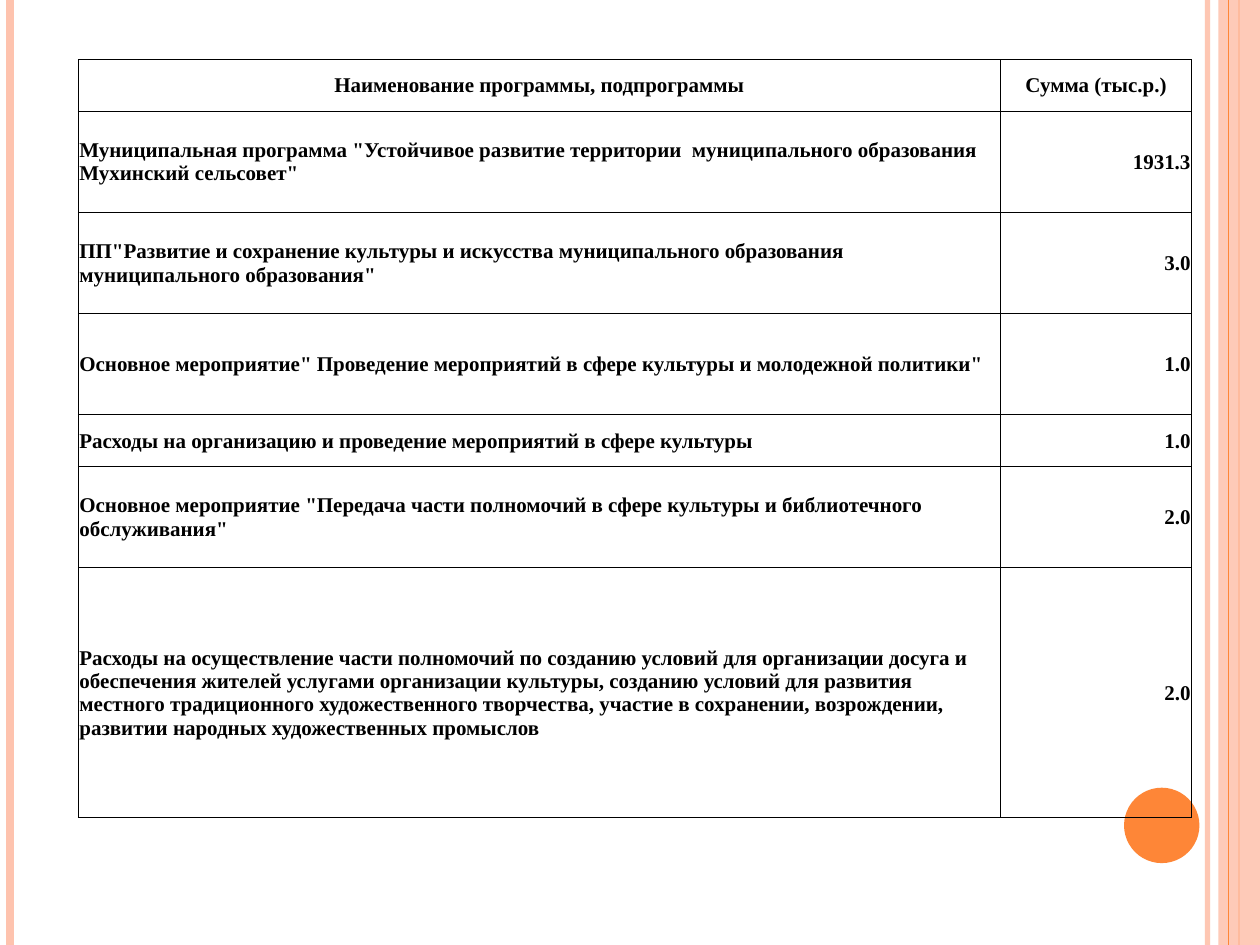
from lxml.etree import SubElement
from pptx import Presentation
from pptx.dml.color import RGBColor
from pptx.enum.shapes import MSO_CONNECTOR as Link, MSO_SHAPE as Shape
from pptx.enum.text import MSO_ANCHOR as Anchor, PP_ALIGN as Align
from pptx.oxml.ns import qn
from pptx.util import Cm, Pt

COLORS = {"pink": "FEC3AE", "orange": "FE8637", "black": "000000"}
WIDTH, HEIGHT = 25.4, 19.05
BAND_LEFT = 24.56

ROWS = [
    ("Наименование программы, подпрограммы", "Сумма (тыс.р.)"),
    ('Муниципальная программа "Устойчивое развитие территории  '
     'муниципального образования Мухинский сельсовет"', "1931.3"),
    ('ПП"Развитие и сохранение культуры и искусства муниципального образования '
     'муниципального образования"', "3.0"),
    ('Основное мероприятие" Проведение мероприятий в сфере культуры '
     'и молодежной политики"', "1.0"),
    ("Расходы на организацию и проведение мероприятий в сфере культуры", "1.0"),
    ('Основное мероприятие "Передача части полномочий в сфере культуры '
     'и библиотечного обслуживания"', "2.0"),
    ("Расходы на осуществление части полномочий по созданию условий для "
     "организации досуга и обеспечения жителей услугами организации культуры, "
     "созданию условий для развития местного традиционного художественного "
     "творчества, участие в сохранении, возрождении, развитии народных "
     "художественных промыслов", "2.0"),
]
COLUMN_WIDTHS = [18.59, 3.85]
LOW, MIDDLE, TALL = 1.04, 2.04, 5.04
ROW_HEIGHTS = [LOW, MIDDLE, MIDDLE, MIDDLE, LOW, MIDDLE, TALL]


def rgb(name):
    return RGBColor.from_string(COLORS[name])


def set_opacity(properties, percent):
    """Add opacity to the first solid colour inside the shape properties."""
    color = next(properties.iter(qn("a:srgbClr")))
    SubElement(color, qn("a:alpha"), val=str(percent * 1000))


class SlidePainter:
    """Holds the text style and the slide that is being filled."""

    def __init__(self, slide):
        self.slide = slide
        self.font = {"name": "Times New Roman", "size": Pt(12), "bold": True}
        self.cell_format = {
            "vertical_anchor": Anchor.MIDDLE,
            "margin_left": Cm(0.02), "margin_right": Cm(0.02),
            "margin_top": Cm(0.02), "margin_bottom": Cm(0),
        }
        self.border_width = Pt(0.5)

    def stripe(self, x, color, weight, opacity=100):
        """Draw a vertical line over the full slide height."""
        line = self.slide.shapes.add_connector(
            Link.STRAIGHT, Cm(x), Cm(0), Cm(x), Cm(HEIGHT))
        line.line.color.rgb = rgb(color)
        line.line.width = Pt(weight)
        properties = line._element.spPr
        SubElement(properties, qn("a:effectLst"))
        if opacity < 100:
            set_opacity(properties, opacity)

    def shape(self, kind, left, top, width, height, color, opacity=100):
        shape = self.slide.shapes.add_shape(
            kind, Cm(left), Cm(top), Cm(width), Cm(height))
        shape.shadow.inherit = False
        shape.fill.solid()
        shape.fill.fore_color.rgb = rgb(color)
        shape.line.fill.background()
        if opacity < 100:
            set_opacity(shape._element.spPr, opacity)

    def border(self, cell):
        properties = cell._tc.get_or_add_tcPr()
        for position, side in enumerate(("a:lnL", "a:lnR", "a:lnT", "a:lnB")):
            line = properties.makeelement(qn(side), {"w": str(self.border_width)})
            fill = SubElement(line, qn("a:solidFill"))
            SubElement(fill, qn("a:srgbClr"), val=COLORS["black"])
            properties.insert(position, line)

    def cell(self, cell, text, align):
        for key, value in self.cell_format.items():
            setattr(cell, key, value)
        cell.fill.background()
        self.border(cell)
        para = cell.text_frame.paragraphs[0]
        para.alignment = align
        span = para.add_run()
        span.text = text
        for key, value in self.font.items():
            setattr(span.font, key, value)
        span.font.color.rgb = rgb("black")

    def table(self, left, top, widths, heights, rows):
        table = self.slide.shapes.add_table(
            len(heights), len(widths), Cm(left), Cm(top),
            Cm(sum(widths)), Cm(sum(heights))).table
        table.first_row = table.horz_banding = False
        for column, width in zip(table.columns, widths):
            column.width = Cm(width)
        for row, height in zip(table.rows, heights):
            row.height = Cm(height)
        for r, texts in enumerate(rows):
            aligns = (Align.LEFT, Align.RIGHT) if r else (Align.CENTER,) * 2
            for c, (text, align) in enumerate(zip(texts, aligns)):
                self.cell(table.cell(r, c), text, align)


def main():
    deck = Presentation()
    deck.slide_width, deck.slide_height = Cm(WIDTH), Cm(HEIGHT)
    painter = SlidePainter(deck.slides.add_slide(deck.slide_layouts[6]))

    painter.stripe(24.34, "pink", 3, opacity=93)
    painter.stripe(0.21, "pink", 4.5)
    painter.stripe(24.98, "orange", 1.5)
    painter.shape(Shape.RECTANGLE, BAND_LEFT, 0, WIDTH - BAND_LEFT, HEIGHT,
                  "pink", opacity=87)
    painter.stripe(24.77, "orange", 0.75)
    painter.shape(Shape.OVAL, 22.66, 15.88, 1.52, 1.52, "orange")
    painter.table(1.58, 1.2, COLUMN_WIDTHS, ROW_HEIGHTS, ROWS)

    deck.save("out.pptx")


if __name__ == "__main__":
    main()
